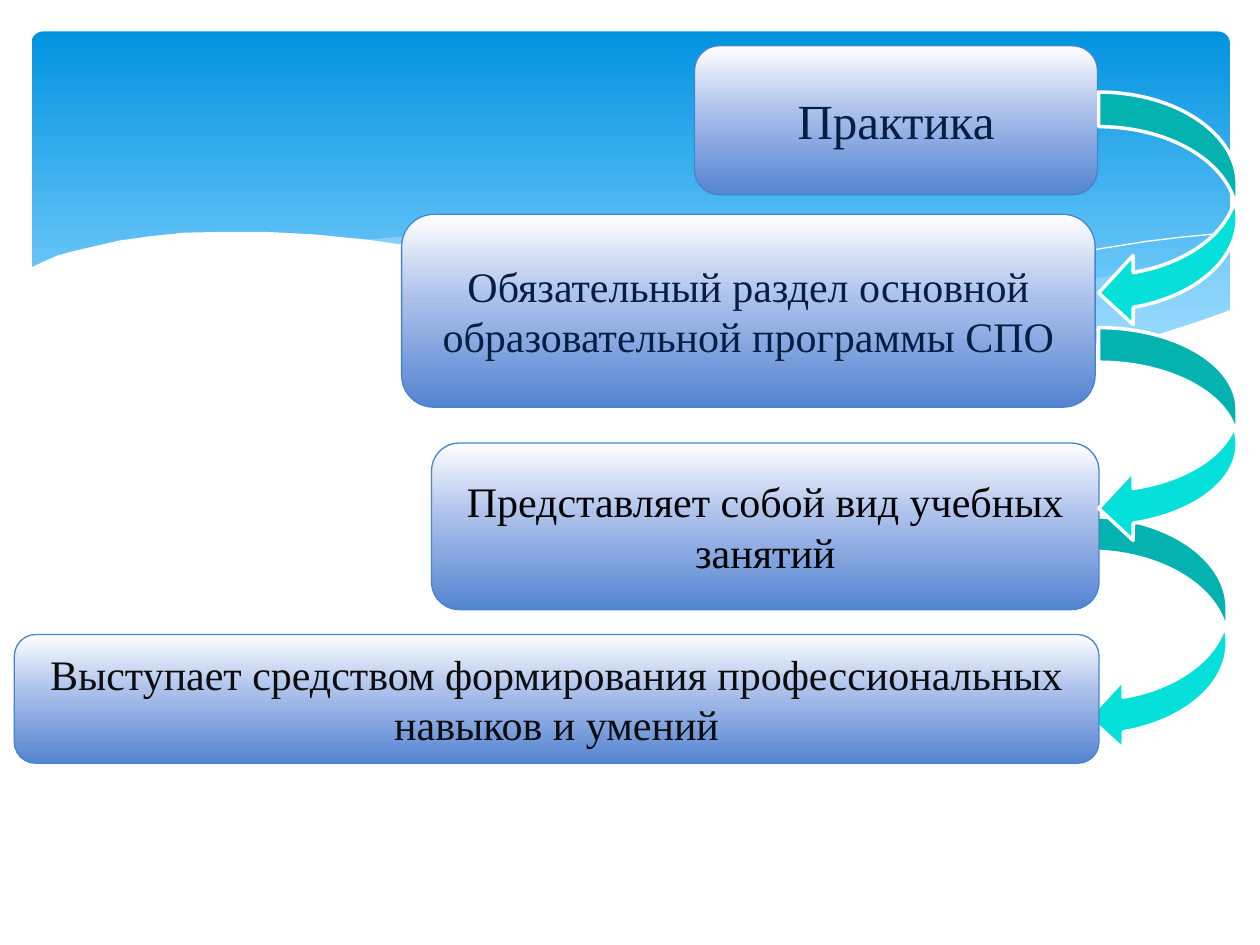
from copy import deepcopy

from lxml import etree
from pptx import Presentation
from pptx.dml.color import RGBColor
from pptx.enum.shapes import MSO_SHAPE
from pptx.enum.text import MSO_ANCHOR, PP_ALIGN
from pptx.oxml.ns import qn
from pptx.util import Pt

ROUND = MSO_SHAPE.ROUNDED_RECTANGLE
CURVED = MSO_SHAPE.CURVED_LEFT_ARROW
MIDDLE = MSO_ANCHOR.MIDDLE
CENTER = PP_ALIGN.CENTER

WHITE = RGBColor(0xFF, 0xFF, 0xFF)
MIST = RGBColor(0xC6, 0xE7, 0xFC)
CYAN = RGBColor(0x05, 0xE0, 0xDB)
EDGE = RGBColor(0x45, 0x84, 0xD3)
NAVY = RGBColor(0x04, 0x1F, 0x44)
BLACK = RGBColor(0, 0, 0)
COAL = RGBColor(0x0D, 0x0D, 0x0D)
SKY = [(0, RGBColor(0x02, 0x93, 0xE0)), (0.9, RGBColor(0x83, 0xD3, 0xFE))]
STEEL = [(0, WHITE), (0.44, RGBColor(0xAB, 0xC0, 0xEB)),
         (1, RGBColor(0x54, 0x84, 0xD1))]
FONT = "Times New Roman"

# Cards: text, size, colour, (left, top, width, height)
CARDS = [
    ("Практика", 28, NAVY, (396.9, 26.2, 230.2, 85)),
    ("Обязательный раздел основной образовательной программы СПО",
     24, NAVY, (229.5, 122.5, 396.3, 110.2)),
    ("Представляет собой вид учебных занятий",
     24, BLACK, (246.6, 253.2, 381.4, 95.2)),
    ("Выступает средством формирования профессиональных навыков и умений",
     24, COAL, (8.2, 362.6, 619.8, 73.6)),
]

# Arrows: (left, top, width, height)
BACK = [(622.1, 295.2, 79.2, 134.6)]
FRONT = [(627.8, 187.2, 79.2, 123.1), (627.8, 52.6, 79.2, 134.6)]

# Waves of the banner: points, fill, opacity in percent
RIGHT = [(702, 144), (683, 147), (663, 151), (642, 155.5), (620, 160.5),
         (580, 170.5), (542, 178.5), (508, 185), (476, 191), (498, 193.5),
         (527, 197), (554, 199), (586, 200), (615, 199), (640, 196),
         (663, 191), (683, 185), (703, 178), (703, 144)]
LEFT = [(643, 196.5), (603, 191), (558, 183), (508, 173), (453, 160),
        (420, 152), (389.5, 146), (361.5, 141), (335, 137.5), (302, 134.5),
        (273.5, 133), (248, 134), (225, 135.5), (206, 137.5), (232.5, 141),
        (260.5, 146), (291, 152), (323, 160), (381.5, 173), (433, 183.5),
        (479, 191.5), (520, 197), (556.5, 199.5), (596, 200), (624, 199)]
FALL = [(222.5, 140.5), (247.5, 137), (278.5, 134.5), (312, 134.5),
        (352, 137), (400, 142), (438, 147), (479, 153.5), (523.5, 162.5),
        (572.5, 173.5), (625.5, 188), (653, 196)]
RISE = [(441.5, 185), (484, 173.5), (538.5, 160.5), (580.5, 151),
        (623.5, 143), (655, 138), (675.5, 135.5), (702, 133)]
BASE = [(703.5, 177), (684, 184), (662, 191), (639, 195), (612, 198),
        (582, 199.5), (548, 198), (510, 194.5), (467, 189), (417, 180),
        (362, 168), (322, 158.5), (282, 149), (245, 142), (210, 137),
        (180, 134), (152, 132.5), (127, 132.5), (105, 133), (86, 135),
        (68, 137.5), (55, 140.5), (42, 143.5), (33, 146), (26, 149),
        (16.5, 153.5), (16.5, 237), (703.5, 237)]
WAVES = [(RIGHT, MIST, 29), (LEFT, MIST, 40), (FALL, None, 0),
         (RISE, None, 0), (BASE, WHITE, 100)]


def add_shape(slide, kind, box):
    shape = slide.shapes.add_shape(kind, *map(Pt, box))
    shape.shadow.inherit = False
    return shape


def shade(shape, stops):
    """Fill from top to bottom with any number of colour stops."""
    fill = shape.fill
    fill.gradient()
    fill.gradient_angle = 270
    group = shape.element.spPr.find(qn("a:gradFill")).find(qn("a:gsLst"))
    for _ in stops[2:]:
        group.append(deepcopy(group[0]))
    for stop, (place, color) in zip(fill.gradient_stops, stops):
        stop.position = place
        stop.color.rgb = color


def add_wave(slide, points, color, alpha):
    spots = [(Pt(x), Pt(y)) for x, y in points]
    pen = slide.shapes.build_freeform(*spots[0])
    pen.add_line_segments(spots[1:], close=color is not None)
    wave = pen.convert_to_shape()
    wave.shadow.inherit = False
    if color is None:
        wave.fill.background()
        wave.line.color.rgb = WHITE
        wave.line.width = Pt(0)
        return
    wave.line.fill.background()
    wave.fill.solid()
    wave.fill.fore_color.rgb = color
    if alpha < 100:
        tint = wave.element.spPr.find(qn("a:solidFill"))[0]
        etree.SubElement(tint, qn("a:alpha")).set("val", str(alpha * 1000))


def add_card(slide, text, size, color, box):
    card = add_shape(slide, ROUND, box)
    shade(card, STEEL)
    card.line.color.rgb = EDGE
    card.line.width = Pt(0.75)
    frame = card.text_frame
    frame.word_wrap = True
    frame.vertical_anchor = MIDDLE
    frame.margin_left = frame.margin_right = Pt(1.44)
    frame.margin_top = frame.margin_bottom = Pt(1.44)
    para = frame.paragraphs[0]
    para.text = text
    para.alignment = CENTER
    para.font.name = FONT
    para.font.size = Pt(size)
    para.font.color.rgb = color


def add_arrow(slide, box):
    arrow = add_shape(slide, CURVED, box)
    arrow.fill.solid()
    arrow.fill.fore_color.rgb = CYAN
    arrow.line.color.rgb = WHITE
    arrow.line.width = Pt(2)


def main():
    deck = Presentation()
    deck.slide_width, deck.slide_height = Pt(720), Pt(540)
    slide = deck.slides.add_slide(deck.slide_layouts[6])

    # Banner
    sky = add_shape(slide, ROUND, (18, 18, 684.7, 194.4))
    sky.adjustments[0] = 0.034
    shade(sky, SKY)
    sky.line.fill.background()
    for wave in WAVES:
        add_wave(slide, *wave)

    # Cards between the back and front arrows
    for box in BACK:
        add_arrow(slide, box)
    for card in CARDS:
        add_card(slide, *card)
    for box in FRONT:
        add_arrow(slide, box)

    deck.save("out.pptx")


if __name__ == "__main__":
    main()
